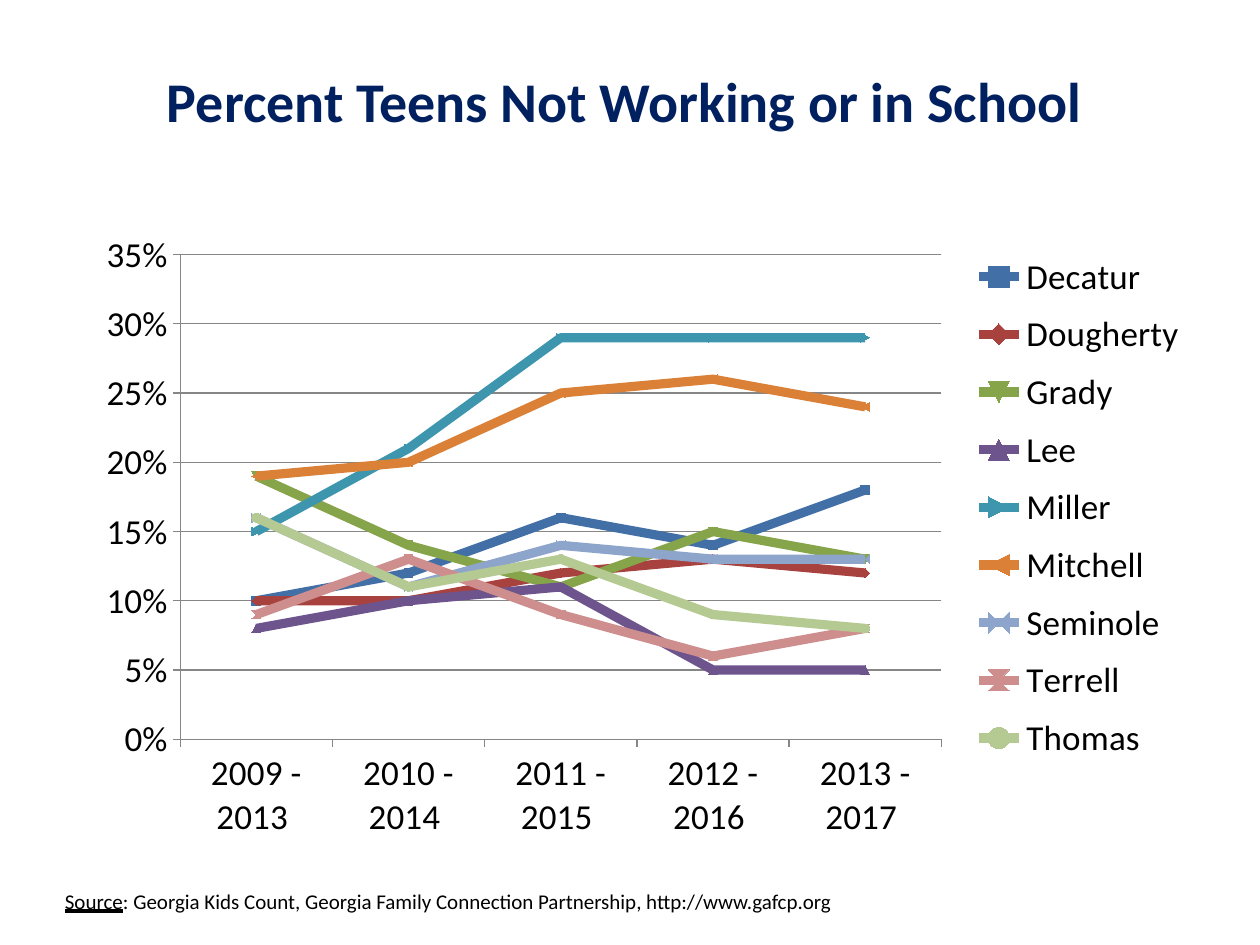
from typing import NamedTuple

from lxml import etree
from pptx import Presentation
from pptx.chart.data import CategoryChartData
from pptx.dml.color import RGBColor
from pptx.enum.chart import XL_CHART_TYPE, XL_LEGEND_POSITION, XL_TICK_MARK
from pptx.enum.text import MSO_ANCHOR, MSO_UNDERLINE, PP_ALIGN
from pptx.oxml import parse_xml
from pptx.oxml.ns import nsdecls
from pptx.util import Pt

FONT = "Calibri"
COLORS = {
    "title": "002060",
    "text": "000000",
    "axis": "868686",
    "Decatur": "416FA6",
    "Dougherty": "A8423F",
    "Grady": "86A44A",
    "Lee": "6E548D",
    "Miller": "3D96AE",
    "Mitchell": "DA8137",
    "Seminole": "8EA5CB",
    "Terrell": "CE8E8D",
    "Thomas": "B5CA92",
}


class Box(NamedTuple):
    left: float
    top: float
    width: float
    height: float


class County(NamedTuple):
    name: str
    rates: tuple[float, ...]


CHART_BOX = Box(48, 126, 636, 360)
PLOT_BOX = Box(55, 19.5, 435, 277)
LEGEND_BOX = Box(505, 11.5, 127, 305)
START_YEARS = range(2009, 2014)
COUNTIES = [
    County("Decatur", (0.10, 0.12, 0.16, 0.14, 0.18)),
    County("Dougherty", (0.10, 0.10, 0.12, 0.13, 0.12)),
    County("Grady", (0.19, 0.14, 0.11, 0.15, 0.13)),
    County("Lee", (0.08, 0.10, 0.11, 0.05, 0.05)),
    County("Miller", (0.15, 0.21, 0.29, 0.29, 0.29)),
    County("Mitchell", (0.19, 0.20, 0.25, 0.26, 0.24)),
    County("Seminole", (0.16, 0.11, 0.14, 0.13, 0.13)),
    County("Terrell", (0.09, 0.13, 0.09, 0.06, 0.08)),
    County("Thomas", (0.16, 0.11, 0.13, 0.09, 0.08)),
]


def rgb(key: str) -> RGBColor:
    return RGBColor.from_string(COLORS[key])


def style_font(font, size: float, color: str) -> None:
    font.name = FONT
    font.size = Pt(size)
    font.color.rgb = rgb(color)


def add_text(slide, box: Box):
    frame = slide.shapes.add_textbox(*map(Pt, box)).text_frame
    frame.word_wrap = True
    return frame


def add_title(slide) -> None:
    title = add_text(slide, Box(12, 12, 690, 90))
    title.vertical_anchor = MSO_ANCHOR.MIDDLE
    title.text = "Percent Teens Not Working or in School"
    heading = title.paragraphs[0]
    heading.alignment = PP_ALIGN.CENTER
    style_font(heading.runs[0].font, 32, "title")
    heading.runs[0].font.bold = True


def add_source(slide) -> None:
    citation = add_text(slide, Box(30, 504, 660, 21.6)).paragraphs[0]
    label, reference = citation.add_run(), citation.add_run()
    label.text = "Source"
    reference.text = (
        ": Georgia Kids Count, Georgia Family Connection Partnership, "
        "http://www.gafcp.org"
    )
    for part in (label, reference):
        style_font(part.font, 12, "text")
    label.font.underline = MSO_UNDERLINE.HEAVY_LINE


def layout_xml(area: Box, chart_box: Box, inner: bool = False) -> etree._Element:
    target = '<c:layoutTarget val="inner"/>' if inner else ""
    return parse_xml(
        f'<c:layout {nsdecls("c")}><c:manualLayout>{target}'
        '<c:xMode val="edge"/><c:yMode val="edge"/>'
        f'<c:x val="{area.left / chart_box.width}"/>'
        f'<c:y val="{area.top / chart_box.height}"/>'
        f'<c:w val="{area.width / chart_box.width}"/>'
        f'<c:h val="{area.height / chart_box.height}"/>'
        "</c:manualLayout></c:layout>"
    )


def remove_layout(part: etree._Element) -> None:
    for layout in part.findall("{*}layout"):
        part.remove(layout)


def style_line(line, color: str, width: float) -> None:
    line.color.rgb = rgb(color)
    line.width = Pt(width)


def add_rate_chart(slide, box: Box) -> None:
    rates = CategoryChartData(number_format="0%")
    rates.categories = [f"{year} - {year + 4} " for year in START_YEARS]
    for county in COUNTIES:
        rates.add_series(county.name, county.rates)
    chart = slide.shapes.add_chart(
        XL_CHART_TYPE.LINE_MARKERS, *map(Pt, box), rates
    ).chart
    style_font(chart.font, 20, "text")
    chart.has_title = False

    chart.has_legend = True
    chart.legend.position = XL_LEGEND_POSITION.RIGHT
    chart.legend.include_in_layout = False

    percent_axis = chart.value_axis
    percent_axis.minimum_scale = 0
    percent_axis.maximum_scale = 0.35
    percent_axis.major_unit = 0.05
    percent_axis.tick_labels.number_format = "0%"
    percent_axis.tick_labels.number_format_is_linked = False
    percent_axis.has_major_gridlines = True
    style_line(percent_axis.major_gridlines.format.line, "axis", 0.75)
    for axis in (percent_axis, chart.category_axis):
        axis.major_tick_mark = XL_TICK_MARK.OUTSIDE
        style_line(axis.format.line, "axis", 0.75)

    plot = chart.plots[0]
    plot.vary_by_categories = False
    for series in plot.series:
        series.smooth = False
        style_line(series.format.line, series.name, 5.25)
        marker = series.marker.format
        marker.fill.solid()
        marker.fill.fore_color.rgb = rgb(series.name)
        marker.line.color.rgb = rgb(series.name)

    plot_area = chart._chartSpace.chart.plotArea
    legend = chart.legend._element
    remove_layout(plot_area)
    remove_layout(legend)
    plot_area.insert(0, layout_xml(PLOT_BOX, box, inner=True))
    legend.find("{*}legendPos").addnext(layout_xml(LEGEND_BOX, box))


def main() -> None:
    deck = Presentation()
    deck.slide_width, deck.slide_height = Pt(720), Pt(540)
    slide = deck.slides.add_slide(deck.slide_layouts[6])
    add_title(slide)
    add_source(slide)
    add_rate_chart(slide, CHART_BOX)
    deck.save("out.pptx")


if __name__ == "__main__":
    main()
